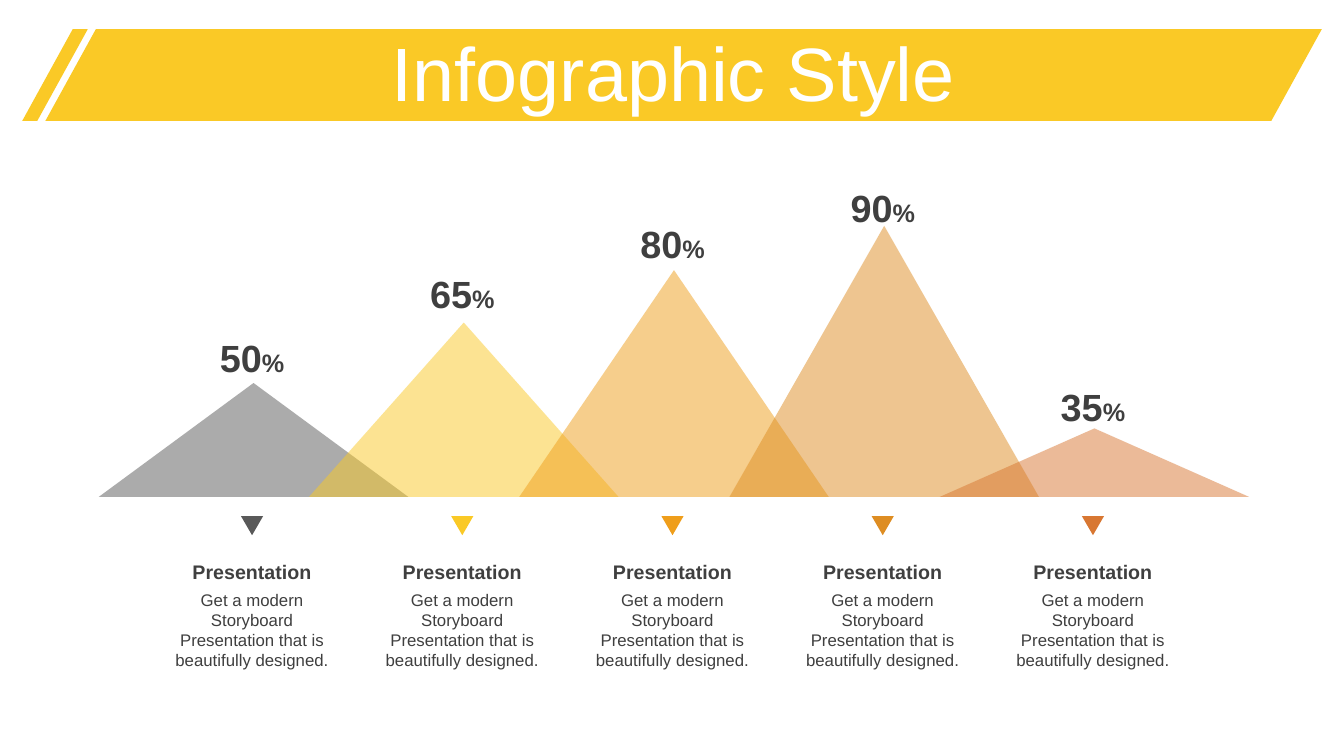
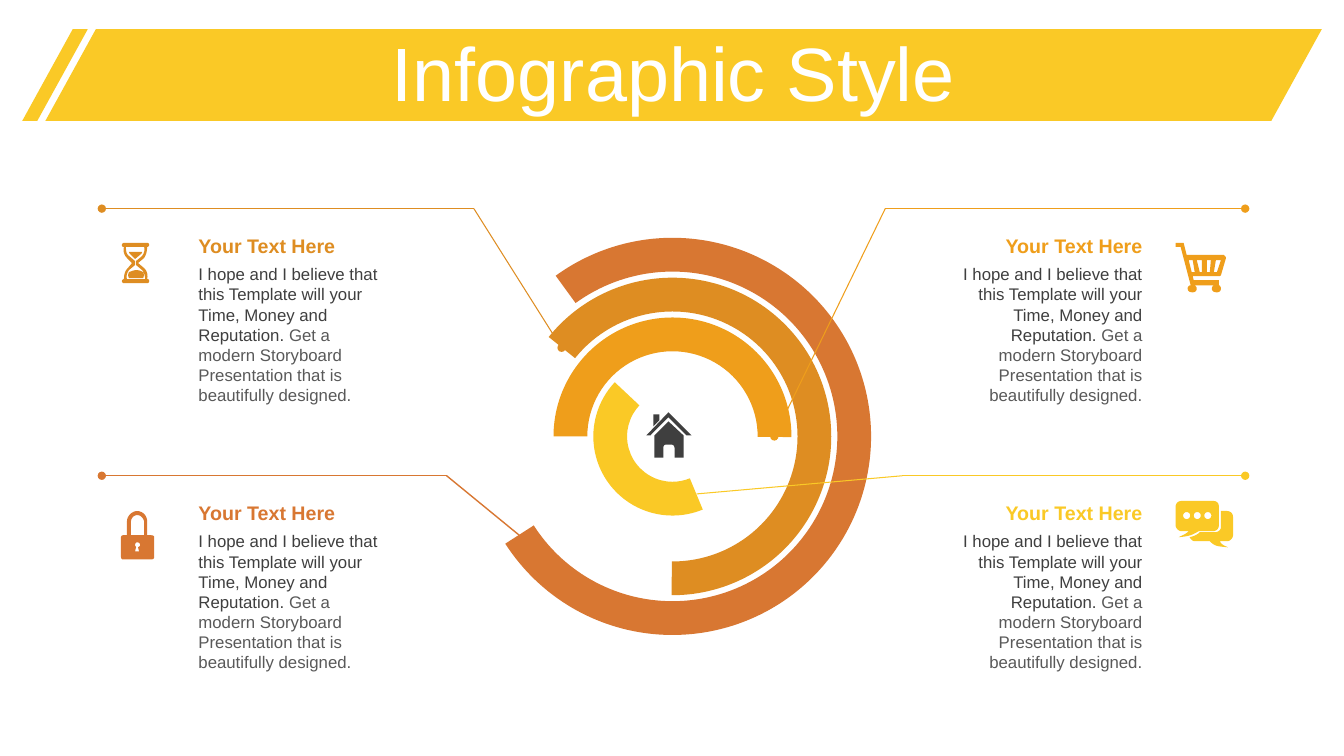
"""Build two infographic slides: a peak chart and a ring diagram."""
from math import cos, sin, tau

from lxml import etree
from pptx import Presentation
from pptx import util as u
from pptx.dml.color import RGBColor
from pptx.enum import shapes, text
from pptx.oxml.ns import qn

SHAPE = shapes.MSO_SHAPE
ALIGN = text.PP_ALIGN


class Theme:
    font = "Arial"
    white, dark, gray = "FFFFFF", "3F3F3F", "595959"
    gold, amber, ochre, rust = "FAC926", "EF9E1B", "DE8D22", "D87732"
    title, value, unit, head, body = 54, 27, 18, 14, 12


TITLE = "Infographic Style"
BANDS = [((0.45, 0.29, 12.66, 0.91), 0.55), ((0.22, 0.29, 0.65, 0.91), 0.77)]

PEAKS = [
    ("50", 1.13, 3.27, Theme.gray),
    ("65", 1.73, 2.64, Theme.gold),
    ("80", 2.25, 2.14, Theme.amber),
    ("90", 2.69, 1.78, Theme.ochre),
    ("35", 0.68, 3.76, Theme.rust),
]
CAPTION = "Presentation"
DETAIL = "Get a modern Storyboard Presentation that is beautifully designed."

HEADING = "Your Text Here"
CLAIM = "I hope and I believe that this Template will your Time, Money and Reputation."
OFFER = " Get a modern Storyboard Presentation that is beautifully designed."

RINGS = [
    (67.5, 223.2, Theme.gold),
    (180, 0.3, Theme.amber),
    (218.8, 90.3, Theme.ochre),
    (234, 147.3, Theme.rust),
]

GLASS = [
    [(14, 27), (17, 27, 19, 28, 21, 29), (22, 31, 22, 33, 21, 35), (7, 35),
     (6, 33, 6, 31, 7, 29), (10, 28, 12, 27, 14, 27)],
    [(7, 9), (20, 9), (20, 9, 20, 10, 19, 11), (13, 16), (8, 11), (7, 10, 7, 9, 7, 9)],
    [(4, 4), (4, 7, 4, 11, 7, 13), (13, 18), (13, 22), (7, 27), (5, 30, 4, 33, 5, 36),
     (23, 36), (23, 33, 22, 29, 20, 27), (14, 22), (14, 18), (20, 13),
     (22, 10, 23, 7, 22, 4)],
    [(2, 0), (25, 0), (26, 0, 27, 1, 27, 2), (27, 3, 26, 4, 25, 4),
     (25, 8, 24, 12, 22, 15), (16, 20), (22, 25), (25, 28, 26, 32, 25, 36),
     (27, 36, 27, 37, 27, 38), (27, 39, 26, 40, 25, 40), (2, 40),
     (1, 40, 0, 39, 0, 38), (0, 37, 1, 36, 2, 36), (2, 32, 3, 28, 5, 26), (10, 20),
     (5, 15), (2, 12, 1, 8, 2, 4), (0, 4, 0, 3, 0, 2), (0, 1, 1, 0, 2, 0)],
]
CART = [
    [(40, 17), (38, 29), (41, 29), (45, 17)],
    [(31, 17), (31, 29), (34, 29), (35, 17)],
    [(21, 17), (24, 29), (26, 29), (26, 17)],
    [(13, 17), (16, 29), (19, 29), (17, 17)],
    [(8, 0), (11, 12), (48, 12), (49, 13, 50, 14, 50, 15), (45, 32),
     (44, 33, 44, 33, 43, 33), (17, 33), (18, 37), (43, 37), (43, 42),
     (44, 42, 45, 44, 45, 45), (45, 48, 43, 49, 41, 49), (38, 49, 36, 48, 36, 45),
     (36, 44, 37, 42, 39, 42), (19, 42), (20, 43, 21, 44, 21, 45),
     (21, 48, 19, 49, 17, 49), (14, 49, 12, 48, 12, 45), (12, 44, 13, 42, 15, 42),
     (5, 4), (0, 4), (0, 0)],
]
LOCK = [
    [(16, 31), (15, 31, 14, 32, 14, 34), (14, 35, 15, 35, 15, 36), (14, 40), (18, 40),
     (17, 36), (18, 35, 19, 35, 19, 34), (19, 32, 18, 31, 16, 31)],
    [(16, 4), (13, 4, 10, 7, 10, 10), (10, 24), (23, 24), (23, 10), (22, 7, 20, 4, 16, 4)],
    [(16, 0), (22, 0, 26, 5, 26, 10), (26, 24), (30, 24), (32, 24, 33, 25, 33, 26),
     (33, 45), (33, 47, 32, 48, 30, 48), (2, 48), (1, 48, 0, 47, 0, 45), (0, 26),
     (0, 25, 1, 24, 2, 24), (6, 24), (6, 10), (6, 5, 11, 0, 16, 0)],
]
CHAT = [
    [(11, 14.5, 3.5)], [(21.5, 14.5, 3.5)], [(32, 14.5, 3.5)],
    [(45, 10), (51, 10), (54, 10, 57, 12, 57, 16), (57, 34), (57, 37, 54, 40, 51, 40),
     (44, 40), (45, 42, 45, 43, 52, 46), (41, 45, 39, 45, 34, 40), (19, 40),
     (17, 40, 15, 38, 14, 36), (18, 35, 21, 34, 24, 31), (39, 31),
     (42, 31, 45, 29, 45, 26)],
    [(6, 0), (37, 0), (41, 0, 43, 2, 43, 6), (43, 24), (43, 27, 41, 30, 37, 30),
     (23, 30), (16, 34, 14, 35, 3, 36), (9, 33, 10, 33, 13, 30), (6, 30),
     (3, 30, 0, 27, 0, 24), (0, 6), (0, 2, 3, 0, 6, 0)],
]
HOUSE = [
    [(22, 9), (37, 23), (37, 45), (28, 45), (28, 35), (28, 33, 26, 32, 25, 32), (20, 32),
     (18, 32, 17, 33, 17, 35), (17, 45), (8, 45), (8, 23)],
    [(7, 2), (13, 2), (13, 8), (7, 14)],
    [(22, 0), (45, 23), (40, 23), (22, 5), (4, 23), (0, 23)],
]

NOTES = [
    dict(top=2.07, right=False, color=Theme.ochre, knee=4.7, tip=(5.57, 3.45),
         dot=True, width=0.75, icon=GLASS, spot=(1.21, 2.41)),
    dict(top=2.07, right=True, color=Theme.amber, knee=8.78, tip=(7.68, 4.33),
         dot=True, width=0.75, icon=CART, spot=(11.66, 2.41)),
    dict(top=4.72, right=False, color=Theme.rust, knee=4.43, tip=(5.15, 5.31),
         dot=False, width=1, icon=LOCK, spot=(1.2, 5.07)),
    dict(top=4.72, right=True, color=Theme.gold, knee=8.95, tip=(6.91, 4.9),
         dot=False, width=0.75, icon=CHAT, spot=(11.66, 4.97)),
]


def emu(box):
    return [u.Inches(n) for n in box]


def paint(shape, color, alpha=None):
    shape.shadow.inherit = False
    shape.fill.solid()
    shape.fill.fore_color.rgb = RGBColor.from_string(color)
    shape.line.fill.background()
    if alpha:
        tint = shape._element.spPr.find(qn("a:solidFill"))[0]
        etree.SubElement(tint, qn("a:alpha")).set("val", str(alpha * 1000))


def draw(page, kind, box, color, adjust=(), alpha=None, turn=0):
    shape = page.shapes.add_shape(kind, *emu(box))
    for i, value in enumerate(adjust):
        shape.adjustments[i] = value
    shape.rotation = turn
    paint(shape, color, alpha)


def write(page, box, runs, align=ALIGN.LEFT, side=0.1, anchor=text.MSO_ANCHOR.TOP, space=1):
    frame = page.shapes.add_textbox(*emu(box)).text_frame
    frame.word_wrap = True
    frame.margin_left = frame.margin_right = u.Inches(side)
    frame.vertical_anchor = anchor
    para = frame.paragraphs[0]
    para.alignment, para.line_spacing = align, space
    for words, size, color, bold in runs:
        run = para.add_run()
        run.text = words
        font = run.font
        font.name, font.size, font.bold = Theme.font, u.Pt(size), bold
        font.color.rgb = RGBColor.from_string(color)


def link(page, start, end, color, width, dot):
    line = page.shapes.add_connector(shapes.MSO_CONNECTOR.STRAIGHT, *emu(start + end))
    line.line.color.rgb = RGBColor.from_string(color)
    line.line.width = u.Pt(width)
    props = line._element.spPr
    if dot:
        etree.SubElement(props.find(qn("a:ln")), qn("a:tailEnd")).set("type", "oval")
    etree.SubElement(props, qn("a:effectLst"))


def bend(start, curve, steps=8):
    ends = [start, curve[:2], curve[2:4], curve[4:]]
    for t in (i / steps for i in range(1, steps + 1)):
        part = ((1 - t) ** 3, 3 * t * (1 - t) ** 2, 3 * t * t * (1 - t), t ** 3)
        yield tuple(sum(k * p[axis] for k, p in zip(part, ends)) for axis in (0, 1))


def trace(path, spot):
    points = []
    for item in path:
        if len(item) == 2:
            points.append(item)
        elif len(item) == 3:
            x, y, r = item
            points += [(x + r * cos(tau * i / 24), y + r * sin(tau * i / 24))
                       for i in range(24)]
        else:
            points += bend(points[-1], item)
    return [emu((spot[0] + x / 100, spot[1] + y / 100)) for x, y in points]


def sign(page, icon, spot, color):
    first, *rest = [trace(path, spot) for path in icon]
    pen = page.shapes.build_freeform(*first[0])
    pen.add_line_segments(first[1:])
    for points in rest:
        pen.move_to(*points[0])
        pen.add_line_segments(points[1:])
    paint(pen.convert_to_shape(), color)


def start(deck):
    page = deck.slides.add_slide(deck.slide_layouts[6])
    for box, slant in BANDS:
        draw(page, SHAPE.PARALLELOGRAM, box, Theme.gold, [slant])
    write(page, (0.35, 0.37, 12.66, 0.79), [(TITLE, Theme.title, Theme.white, False)],
          align=ALIGN.CENTER, anchor=text.MSO_ANCHOR.MIDDLE, space=0.9)
    return page


def chart(page):
    base = 4.93
    mids = [2.5 + 2.085 * i for i in range(len(PEAKS))]
    for mid, (_, high, _, color) in zip(mids, PEAKS):
        draw(page, SHAPE.ISOSCELES_TRIANGLE, (mid - 1.52, base - high, 3.07, high),
             color, alpha=50)
    for mid, (value, _, top, color) in zip(mids, PEAKS):
        draw(page, SHAPE.ISOSCELES_TRIANGLE, (mid - 0.11, 5.12, 0.22, 0.19), color, turn=180)
        write(page, (mid - 0.44, top, 0.88, 0.56),
              [(value, Theme.value, Theme.dark, True), ("%", Theme.unit, Theme.dark, True)],
              align=ALIGN.CENTER)
        write(page, (mid - 0.88, 5.51, 1.76, 0.34),
              [(CAPTION, Theme.head, Theme.dark, True)], align=ALIGN.CENTER, side=0)
        write(page, (mid - 0.88, 5.8, 1.76, 0.91),
              [(DETAIL, Theme.body, Theme.dark, False)], align=ALIGN.CENTER, side=0)


def rings(page):
    for i, (begin, end, color) in enumerate(RINGS):
        size = 1.57 + 0.79 * i
        draw(page, SHAPE.BLOCK_ARC, (6.67 - size / 2, 4.33 - size / 2, size, size), color,
             [begin * 0.6, end * 0.6, 0.335 / size])
    sign(page, HOUSE, (6.41, 4.09), Theme.dark)
    for note in NOTES:
        top, color, width = note["top"], note["color"], note["width"]
        left, wide, edge, align = ((9.38, 2.05, 12.35, ALIGN.RIGHT) if note["right"]
                                   else (1.87, 2, 1.01, ALIGN.LEFT))
        knee = (note["knee"], top)
        link(page, knee, (edge, top), color, 0.75, True)
        link(page, knee, note["tip"], color, width, note["dot"])
        write(page, (left, top + 0.2, wide, 0.34),
              [(HEADING, Theme.head, color, True)], align=align)
        write(page, (left, top + 0.5, wide, 1.51),
              [(CLAIM, Theme.body, Theme.dark, False),
               (OFFER, Theme.body, Theme.gray, False)], align=align)
        sign(page, note["icon"], note["spot"], color)


def main():
    deck = Presentation()
    deck.slide_width, deck.slide_height = emu((13.33, 7.5))
    chart(start(deck))
    rings(start(deck))
    deck.save("out.pptx")


if __name__ == "__main__":
    main()
